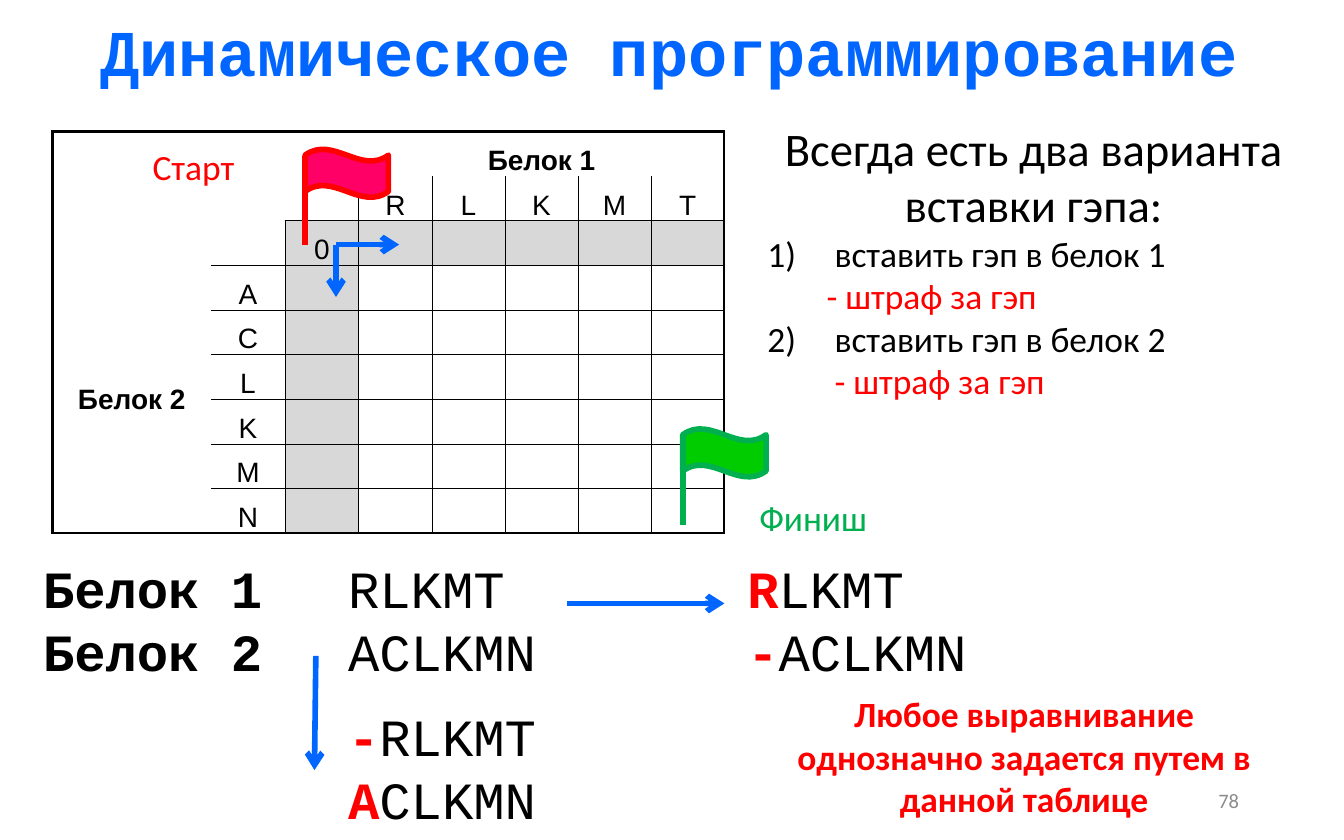
"""Build a slide on the two ways of inserting a gap in dynamic programming."""
import lxml.etree
import pptx
import pptx.dml.color
import pptx.enum.shapes
import pptx.enum.text
import pptx.oxml.ns
import pptx.util

Inches = pptx.util.Inches
Align = pptx.enum.text.PP_ALIGN
Anchor = pptx.enum.text.MSO_ANCHOR
BLACK, RED, BLUE, GREEN = "000000", "FF0000", "0066FF", "00B050"
GREY = "D8D8D8"
NO_GRID_STYLE = "{2D5ABB26-0587-4C30-8999-92F81FD0307C}"


def colour(value):
    return pptx.dml.color.RGBColor.from_string(value)


def add_element(parent, tag, **attributes):
    return lxml.etree.SubElement(parent, pptx.oxml.ns.qn(tag), attributes)


def border_width(position, last, across):
    if position in (0, last):
        return 1.5
    inside = (position >= 2 and across >= 2) or (position >= 3 and across >= 1)
    return 0.5 if inside else 0


class SlideBuilder:
    line_width = 3
    body_font = "Calibri"
    code_font = "Courier New"
    table_font = "Arial"

    def __init__(self, page):
        self.page = page

    def format(self, span, size, font, shade=BLACK, bold=False):
        span.font.size = pptx.util.Pt(size)
        span.font.name = font
        span.font.bold = bold
        span.font.color.rgb = colour(shade)

    def text(self, place, lines, size, font, shade=BLACK, bold=False, align=Align.LEFT, grow=True):
        box = self.page.shapes.add_textbox(*map(Inches, place))
        frame = box.text_frame
        frame.word_wrap = True
        frame.margin_left = frame.margin_right = Inches(0.09)
        frame.margin_top = frame.margin_bottom = Inches(0.04)
        if grow:
            frame.auto_size = pptx.enum.text.MSO_AUTO_SIZE.SHAPE_TO_FIT_TEXT
        frame.text = "\n".join(lines)
        for para in frame.paragraphs:
            para.alignment = align
            for span in para.runs:
                self.format(span, size, font, shade, bold)
        return frame

    def marked_sequences(self, place, sequences):
        frame = self.text(place, [sequence[0] for sequence in sequences], 28, self.code_font, RED, True)
        for para, sequence in zip(frame.paragraphs, sequences):
            span = para.add_run()
            span.text = sequence[1:]
            self.format(span, 28, self.code_font)

    def indent(self, para, left, number=None):
        settings = para._p.get_or_add_pPr()
        settings.set("marL", str(Inches(left)))
        settings.set("indent", str(Inches(-0.5)))
        if number:
            add_element(settings, "a:buAutoNum", type="arabicParenR", startAt=str(number))

    def line(self, start, end, shade=BLUE, arrow=True, shapes=None):
        connector = (shapes or self.page.shapes).add_connector(
            pptx.enum.shapes.MSO_CONNECTOR.STRAIGHT, *map(Inches, start + end))
        connector.line.color.rgb = colour(shade)
        connector.line.width = pptx.util.Pt(self.line_width)
        if arrow:
            add_element(connector.line._get_or_add_ln(), "a:tailEnd", type="arrow")
        add_element(connector._element.spPr, "a:effectLst")

    def flag(self, left, top, pole_height, fill, outline):
        shapes = self.page.shapes.add_group_shape().shapes
        pole_top = top + 0.05
        self.line((left, pole_top), (left, pole_top + pole_height), outline, False, shapes)
        cloth = shapes.add_shape(pptx.enum.shapes.MSO_SHAPE.WAVE, *map(Inches, (left, top, 0.62, 0.36)))
        cloth.shadow.inherit = False
        cloth.fill.solid()
        cloth.fill.fore_color.rgb = colour(fill)
        cloth.line.color.rgb = colour(outline)
        cloth.line.width = pptx.util.Pt(self.line_width)

    def borders(self, cell, widths):
        for side, width in zip("LRTB", widths):
            edge = add_element(cell._tc.get_or_add_tcPr(), "a:ln" + side, w=str(pptx.util.Pt(width)))
            if width:
                add_element(add_element(edge, "a:solidFill"), "a:srgbClr", val=BLACK)
            else:
                add_element(edge, "a:noFill")

    def alignment_table(self, place, first, second):
        rows, columns = len(second) + 3, len(first) + 3
        frame = self.page.shapes.add_table(rows, columns, *map(Inches, place))
        table = frame.table
        table.first_row = table.horz_banding = False
        table._tbl.tblPr.find(pptx.oxml.ns.qn("a:tableStyleId")).text = NO_GRID_STYLE
        heading_widths = [1.18, 0.55, 0.55]
        letter_width = (place[2] - sum(heading_widths)) / len(first)
        for column, width in zip(table.columns, heading_widths + [letter_width] * len(first)):
            column.width = Inches(width)
        table.cell(0, 3).merge(table.cell(0, columns - 1))
        table.cell(3, 0).merge(table.cell(rows - 1, 0))
        words = {(0, 3): "Белок 1", (3, 0): "Белок 2", (2, 2): "0"}
        words.update({(1, 3 + index): letter for index, letter in enumerate(first)})
        words.update({(3 + index, 1): letter for index, letter in enumerate(second)})
        for row in range(rows):
            for column in range(columns):
                cell = table.cell(row, column)
                cell.margin_left = cell.margin_right = cell.margin_top = Inches(0.01)
                cell.margin_bottom = 0
                cell.vertical_anchor = Anchor.MIDDLE if column == 0 else Anchor.BOTTOM
                self.borders(cell, (
                    border_width(column, columns, row),
                    border_width(column + cell.span_width, columns, row),
                    border_width(row, rows, column),
                    border_width(row + cell.span_height, rows, column)))
                if min(row, column) == 2:
                    cell.fill.solid()
                    cell.fill.fore_color.rgb = colour(GREY)
                else:
                    cell.fill.background()
                if (row, column) in words:
                    cell.text = words[row, column]
                    para = cell.text_frame.paragraphs[0]
                    para.alignment = Align.CENTER
                    self.format(para.runs[0], 15, self.table_font, bold=0 in (row, column))

    def gap_options(self, place):
        lines = ["Всегда есть два варианта вставки гэпа:", "вставить гэп в белок 1",
                 "- штраф за гэп", "вставить гэп в белок 2", "\t- штраф за гэп"]
        heading, *options = self.text(place, lines, 19, self.body_font).paragraphs
        heading.alignment = Align.CENTER
        heading.runs[0].font.size = pptx.util.Pt(25)
        options[1].level = 1
        for para, left, number in zip(options, (0.5, 0.94, 0.5, 0.5), (1, None, 2, None)):
            self.indent(para, left, number)
            if not number:
                para.runs[0].font.color.rgb = colour(RED)


def main():
    deck = pptx.Presentation()
    deck.slide_width, deck.slide_height = Inches(10), Inches(6.25)
    builder = SlideBuilder(deck.slides.add_slide(deck.slide_layouts[6]))
    code, body = builder.code_font, builder.body_font
    first, second = "RLKMT", "ACLKMN"

    builder.text((0.04, 0.04, 9.88, 0.68), ["Динамическое программирование"], 35, code, BLUE, True, Align.CENTER)
    builder.text((2.5, 4.1, 1.95, 1.03), [first, second], 28, code)
    builder.alignment_table((0.39, 0.98, 5, 2.99), first, second)
    builder.line((2.5, 1.82), (2.97, 1.82))
    builder.text((0.23, 4.1, 2.19, 1.03), ["Белок 1", "Белок 2"], 28, code, bold=True)
    builder.marked_sequences((5.47, 4.1, 2.58, 1.03), [first, "-" + second])
    builder.marked_sequences((2.5, 5.2, 2.58, 1.03), ["-" + first, second])
    builder.line((2.5, 1.82), (2.5, 2.21))
    builder.line((2.35, 4.88), (2.34, 5.73))
    builder.line((4.22, 4.49), (5.39, 4.49))
    builder.gap_options((5.62, 0.85, 4.14, 2.26))
    builder.text((0.7, 1.04, 1.48, 0.41), ["Старт"], 19, body, RED, align=Align.CENTER)
    builder.text((5.31, 3.65, 1.48, 0.41), ["Финиш"], 19, body, GREEN, align=Align.CENTER)
    builder.flag(5.08, 3.19, 0.67, "00CC00", GREEN)
    builder.flag(2.27, 1.11, 0.66, "FF0066", RED)
    builder.text((5.55, 5.11, 4.14, 1.05), ["Любое выравнивание однозначно задается путем в данной таблице"],
                 19, body, RED, True, Align.CENTER)
    number = builder.text((7.06, 5.79, 2.25, 0.33), ["78"], 11, body, "8C8C8C", align=Align.RIGHT, grow=False)
    number.vertical_anchor = Anchor.MIDDLE
    deck.save("out.pptx")


if __name__ == "__main__":
    main()
